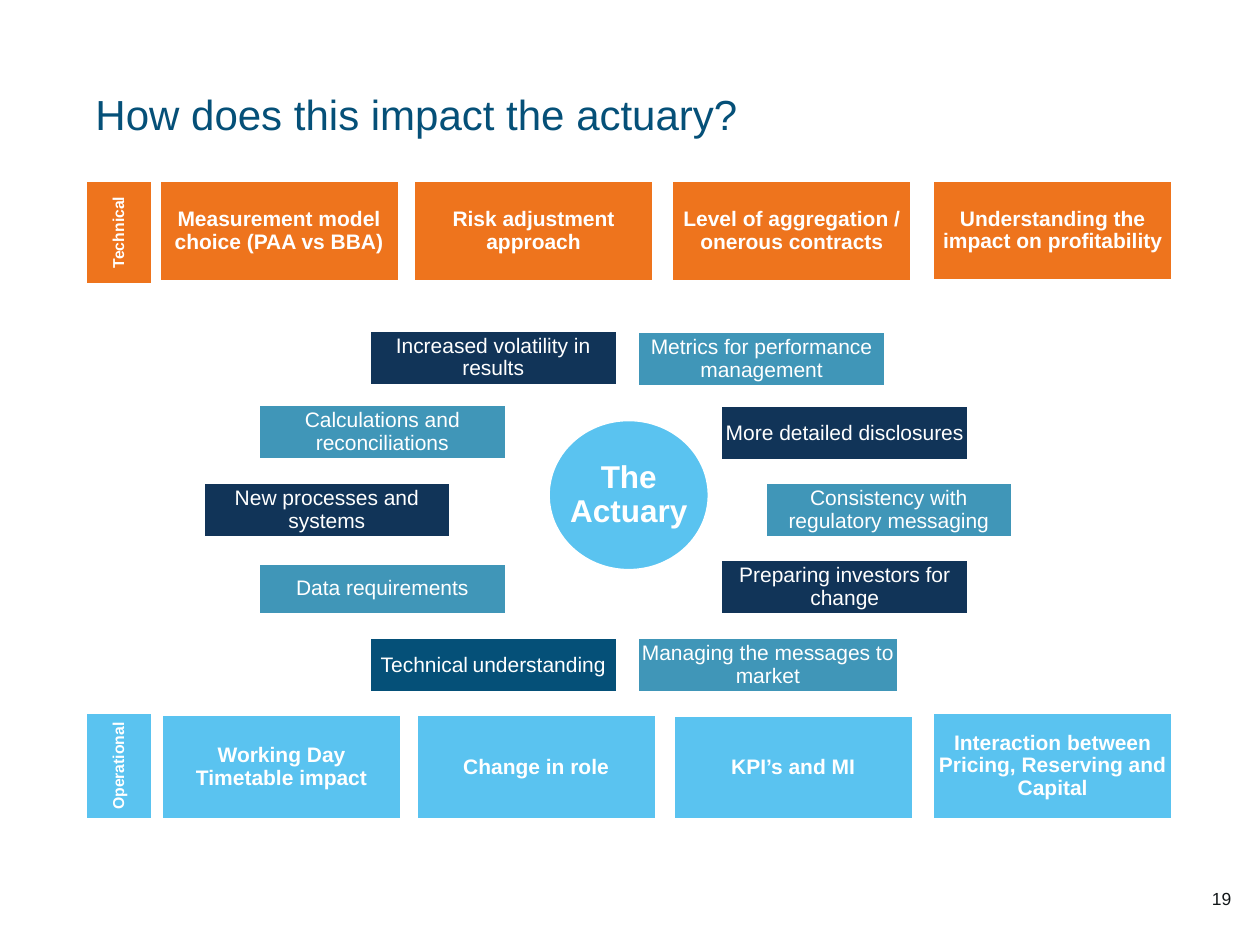
from math import cos, sin, tau

from pptx import Presentation
from pptx import util as u
from pptx.dml.color import RGBColor
from pptx.enum import shapes, text

ORANGE, SKY, TEAL = "EE741D", "5AC3F0", "4096B8"
NAVY, BLUE, WHITE = "113458", "055078", "FFFFFF"


def rgb(code):
    return RGBColor.from_string(code)


def write(shape, runs, color, pad, bold=False, align=None, gap=None):
    """Fill a shape with one paragraph of (words, size) runs."""
    frame = shape.text_frame
    form = {"word_wrap": True, "vertical_anchor": text.MSO_ANCHOR.MIDDLE}
    for side in ("left", "top", "right", "bottom"):
        form["margin_" + side] = u.Inches(pad)
    for key, val in form.items():
        setattr(frame, key, val)
    para = frame.paragraphs[0]
    para.alignment, para.line_spacing = align, gap
    for words, size in runs:
        run = para.add_run()
        run.text = words
        for key, val in {"name": "Arial", "size": u.Pt(size), "bold": bold}.items():
            setattr(run.font, key, val)
        run.font.color.rgb = rgb(color)


deck = Presentation()
deck.slide_width, deck.slide_height = u.Inches(10), u.Inches(7.5)
slide = deck.slides.add_slide(deck.slide_layouts[6])

# Title and page number
for box, words, size, color in [
    ((0.66, 0.43, 9.07, 0.94), "How does this impact the actuary?", 24, BLUE),
    ((9.52, 6.93, 0.48, 0.4), "19", 10, "111618"),
]:
    label = slide.shapes.add_textbox(*map(u.Inches, box))
    write(label, [(words, size)], color, 0.1)

# Central circle, as an outline whose text area is its whole box
mid_x, mid_y, rad_x, rad_y, steps = 4.99, 3.93, 0.64, 0.6, 120
dots = [(u.Inches(mid_x + rad_x * cos(tau * i / steps)),
         u.Inches(mid_y + rad_y * sin(tau * i / steps))) for i in range(steps)]
pen = slide.shapes.build_freeform(*dots[0])
pen.add_line_segments(dots[1:], close=True)

# Each item: shape, fill, runs, padding, bold, turned
items = [(pen.convert_to_shape(), SKY, [("The Actuary", 18)], 0.14, True, False)]

# Top and bottom bands: a turned heading, then four boxes
bands = [
    (ORANGE, "Technical", (1.43, 0.83), [
        (1.26, 1.43, 0.81, "Measurement model choice (PAA vs BBA)"),
        (3.28, 1.43, 0.81, "Risk adjustment approach"),
        (5.33, 1.43, 0.81, "Level of aggregation / onerous contracts"),
        (7.4, 1.43, 0.8, "Understanding the impact on profitability")]),
    (SKY, "Operational", (5.65, 0.86), [
        (1.28, 5.67, 0.84, "Working Day Timetable impact"),
        (3.3, 5.67, 0.84, "Change in role"),
        (5.34, 5.68, 0.83, "KPI’s and MI"),
        (7.4, 5.65, 0.86, "Interaction between Pricing, Reserving and Capital")]),
]

# Ring of themes around the actuary
ring = [
    (2.93, 5.06, 1.97, 0.44, BLUE, [("Technical", 12), (" ", 9), ("understanding", 12)]),
    (2.05, 4.47, 1.97, 0.41, TEAL, [("Data requirements", 12)]),
    (1.61, 3.83, 1.97, 0.44, NAVY, [("New processes and systems", 12)]),
    (2.05, 3.21, 1.97, 0.44, TEAL, [("Calculations and reconciliations", 12)]),
    (2.93, 2.62, 1.97, 0.44, NAVY, [("Increased volatility in results", 12)]),
    (5.06, 2.63, 1.97, 0.44, TEAL, [("Metrics for performance management", 12)]),
    (5.72, 3.22, 1.97, 0.44, NAVY, [("More detailed disclosures", 12)]),
    (6.07, 3.83, 1.97, 0.44, TEAL, [("Consistency with regulatory messaging", 12)]),
    (5.72, 4.44, 1.97, 0.44, NAVY, [("Preparing investors for change", 12)]),
    (5.06, 5.06, 2.07, 0.44, TEAL, [("Managing the messages to market", 12)]),
]

cards = [(box, fill, runs, 0.03, False, False) for *box, fill, runs in ring]
for fill, head, (top, high), boxes in bands:
    cards.append(((0.68, top, 0.53, high), fill, [(head, 9)], 0.02, True, True))
    for left, top, high, words in boxes:
        cards.append(((left, top, 1.91, high), fill, [(words, 12)], 0.04, True, False))

for box, *look in cards:
    rect = slide.shapes.add_shape(shapes.MSO_SHAPE.RECTANGLE, *map(u.Inches, box))
    items.append((rect, *look))

for shape, fill, runs, pad, bold, turned in items:
    shape.shadow.inherit = False
    shape.fill.solid()
    shape.fill.fore_color.rgb = rgb(fill)
    shape.line.color.rgb = rgb(WHITE)
    shape.line.width = u.Pt(2)
    write(shape, runs, WHITE, pad, bold, text.PP_ALIGN.CENTER, 0.9)
    if turned:
        shape.element.txBody.bodyPr.set("vert", "vert270")

deck.save("out.pptx")
